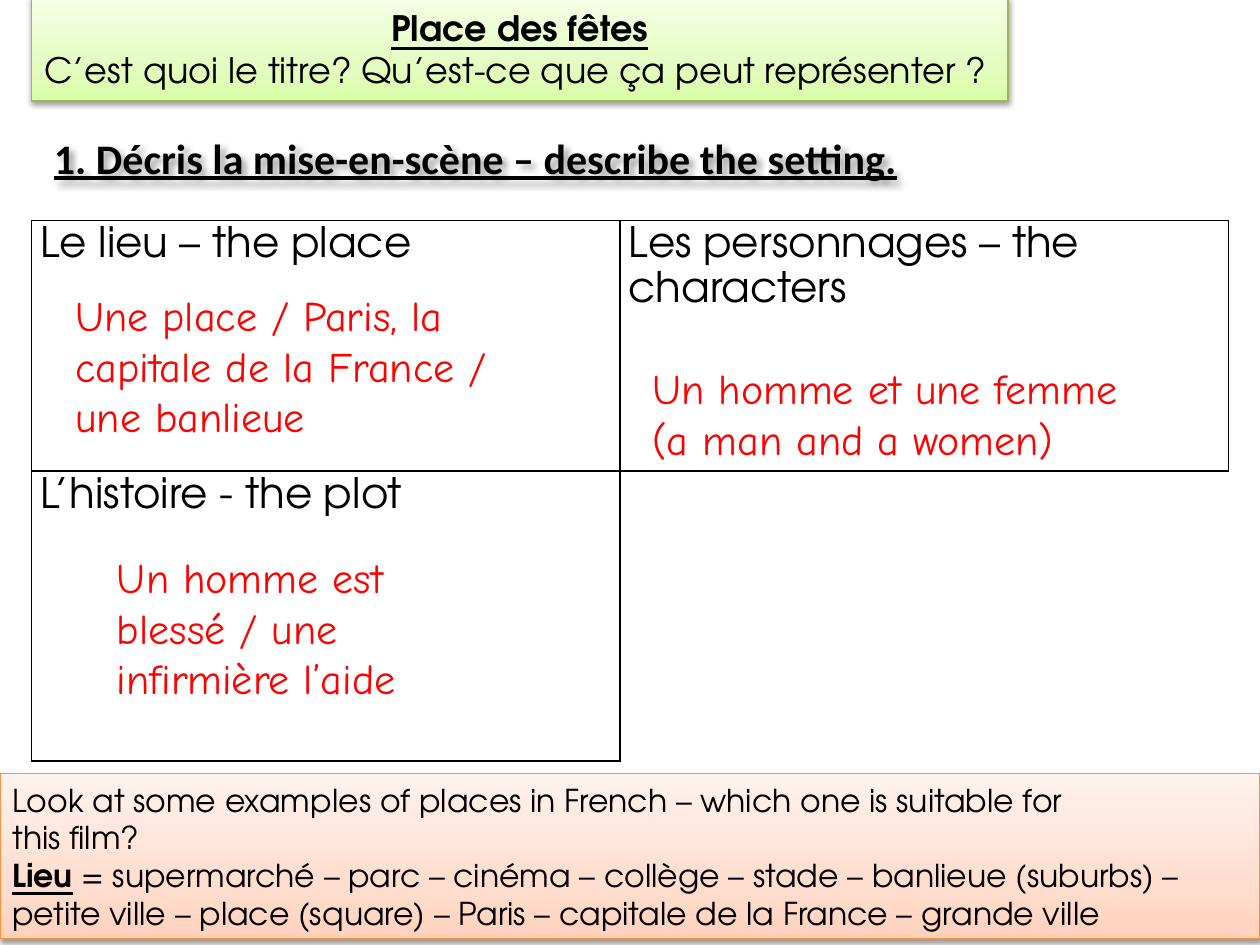
from lxml import etree
from pptx import Presentation
from pptx.dml.color import RGBColor
from pptx.enum.shapes import MSO_SHAPE
from pptx.enum.text import MSO_ANCHOR, MSO_AUTO_SIZE, PP_ALIGN
from pptx.oxml import parse_xml
from pptx.oxml.ns import nsdecls, qn
from pptx.util import Inches, Pt

RECT = MSO_SHAPE.RECTANGLE
MIDDLE, TOP = MSO_ANCHOR.MIDDLE, MSO_ANCHOR.TOP
GROW = MSO_AUTO_SIZE.SHAPE_TO_FIT_TEXT
LEFT, CENTER, JUSTIFY = PP_ALIGN.LEFT, PP_ALIGN.CENTER, PP_ALIGN.JUSTIFY

THEME = {
    "body": "TeX Gyre Adventor", "heading": "Calibri", "answer": "Comic Neue",
    "ink": "000000", "red": "FF0000",
    "green": (["DAFDA7", "E4FCC2", "F5FFE7"], "98B955"),
    "orange": (["FFD2BD", "FFDED0", "FFF2ED"], "F69240"),
    "large": 24, "medium": 20, "small": 18,
}
GRADIENT_STOPS = [0, 35, 100]
BOX_SHADOW = dict(blur=3.1, dist=1.6, angle=90, alpha=38)
TEXT_SHADOW = dict(blur=4, dist=3, angle=45, alpha=40)

# Each paragraph is a list of (text, emphasised) runs.
BANNER = [
    [("Place des fêtes", True)],
    [("C’est quoi le titre? Qu’est-ce que ça peut représenter\u00a0?", False)],
]
HEADING = [[("1. Décris la mise-en-scène – describe the setting.", True)]]
PLACES = [
    [("Look at some examples of places in French – which one is suitable for", False)],
    [("this film?", False)],
    [("Lieu", True),
     (" = supermarché – parc – cinéma – collège – stade – banlieue (suburbs) – "
      "petite ville – place (square) – Paris – capitale de la France – grande ville", False)],
]
# (text, alignment, bordered sides)
GRID = [
    [("Le lieu – the place", JUSTIFY, "LRTB"),
     ("Les personnages – the characters", LEFT, "LRTB")],
    [("L’histoire - the plot", JUSTIFY, "LRTB"), ("", LEFT, "LT")],
]
COLUMNS, ROWS = [4.67, 4.83], [1.99, 2.3]
ANSWERS = [
    ((0.5, 2.25, 4, 1.31), ["Une place / Paris, la capitale de la France / une banlieue"]),
    ((5.08, 2.83, 4.92, 0.91), ["Un homme et une femme", "(a man and a women)"]),
    ((0.83, 4.33, 2.75, 1.31), ["Un homme est blessé / une infirmière l’aide"]),
]


def inches(box):
    return [Inches(v) for v in box]


def style(r, font, size, color, strong=False):
    r.font.name, r.font.size = font, Pt(size)
    r.font.color.rgb = RGBColor.from_string(color)
    r.font.bold = r.font.underline = strong


def write(sp, paragraphs, font, size, color=THEME["ink"], first_align=LEFT,
          anchor=TOP, wrap=True):
    tf = sp.text_frame
    tf.word_wrap, tf.auto_size, tf.vertical_anchor = wrap, GROW, anchor
    for i, runs in enumerate(paragraphs):
        p = tf.add_paragraph() if i else tf.paragraphs[0]
        p.alignment = LEFT if i else first_align
        for text, strong in runs:
            r = p.add_run()
            r.text = text
            style(r, font, size, color, strong)


def add_shadow(sp, blur, dist, angle, alpha):
    sp.shadow.inherit = False
    effects = sp.element.spPr.find(qn("a:effectLst"))
    effects.append(parse_xml(
        f'<a:outerShdw {nsdecls("a")} blurRad="{Pt(blur)}" dist="{Pt(dist)}" '
        f'dir="{angle * 60000}" rotWithShape="0"><a:srgbClr val="000000">'
        f'<a:alpha val="{alpha * 1000}"/></a:srgbClr></a:outerShdw>'))


def decorate(sp, palette):
    """Give a box its three-stop gradient, outline and soft shadow."""
    colors, outline = palette
    sp.fill.gradient()
    sp.fill.gradient_angle = 90
    stops = sp.element.spPr.find(qn("a:gradFill")).find(qn("a:gsLst"))
    for stop in list(stops):
        stops.remove(stop)
    for position, color in zip(GRADIENT_STOPS, colors):
        stop = etree.SubElement(stops, qn("a:gs"), pos=str(position * 1000))
        etree.SubElement(stop, qn("a:srgbClr"), val=color)
    sp.line.color.rgb = RGBColor.from_string(outline)
    sp.line.width = Pt(0.75)
    add_shadow(sp, **BOX_SHADOW)


def set_borders(cell, sides):
    tcPr = cell._tc.get_or_add_tcPr()
    for i, side in enumerate("LRTB"):
        shown = side in sides
        ln = etree.Element(qn(f"a:ln{side}"), w=str(Pt(1) if shown else 0))
        fill = etree.SubElement(ln, qn("a:solidFill" if shown else "a:noFill"))
        if shown:
            etree.SubElement(fill, qn("a:srgbClr"), val=THEME["ink"])
        tcPr.insert(i, ln)


def add_grid(s):
    table = s.shapes.add_table(len(ROWS), len(COLUMNS), *inches(
        (0.25, 1.75, sum(COLUMNS), sum(ROWS)))).table
    table.first_row = table.horz_banding = False
    for column, width in zip(table.columns, COLUMNS):
        column.width = Inches(width)
    for row, height, contents in zip(table.rows, ROWS, GRID):
        row.height = Inches(height)
        for cell, (text, align, sides) in zip(row.cells, contents):
            cell.margin_left = cell.margin_right = Inches(0.07)
            cell.margin_top = cell.margin_bottom = 0
            cell.fill.background()
            set_borders(cell, sides)
            p = cell.text_frame.paragraphs[0]
            p.text, p.alignment, p.line_spacing = text, align, 1.15
            for r in p.runs:
                style(r, THEME["body"], THEME["large"], THEME["ink"])


def main():
    prs = Presentation()
    prs.slide_width, prs.slide_height = Inches(10), Inches(7.5)
    s = prs.slides.add_slide(prs.slide_layouts[5])

    banner = s.shapes.title
    banner.left, banner.top, banner.width, banner.height = inches((0.25, 0, 7.75, 0.77))
    decorate(banner, THEME["green"])
    write(banner, BANNER, THEME["body"], THEME["medium"],
          first_align=CENTER, anchor=MIDDLE, wrap=False)

    add_grid(s)

    heading = s.shapes.add_textbox(*inches((0.33, 1, 7.33, 0.5)))
    write(heading, HEADING, THEME["heading"], THEME["large"])
    add_shadow(heading, **TEXT_SHADOW)

    places = s.shapes.add_shape(RECT, *inches((0, 6.14, 10, 1.31)))
    decorate(places, THEME["orange"])
    write(places, PLACES, THEME["body"], THEME["small"], anchor=MIDDLE)

    for box, lines in ANSWERS:
        write(s.shapes.add_textbox(*inches(box)), [[(line, False)] for line in lines],
              THEME["answer"], THEME["large"], THEME["red"])

    prs.save("out.pptx")


if __name__ == "__main__":
    main()
